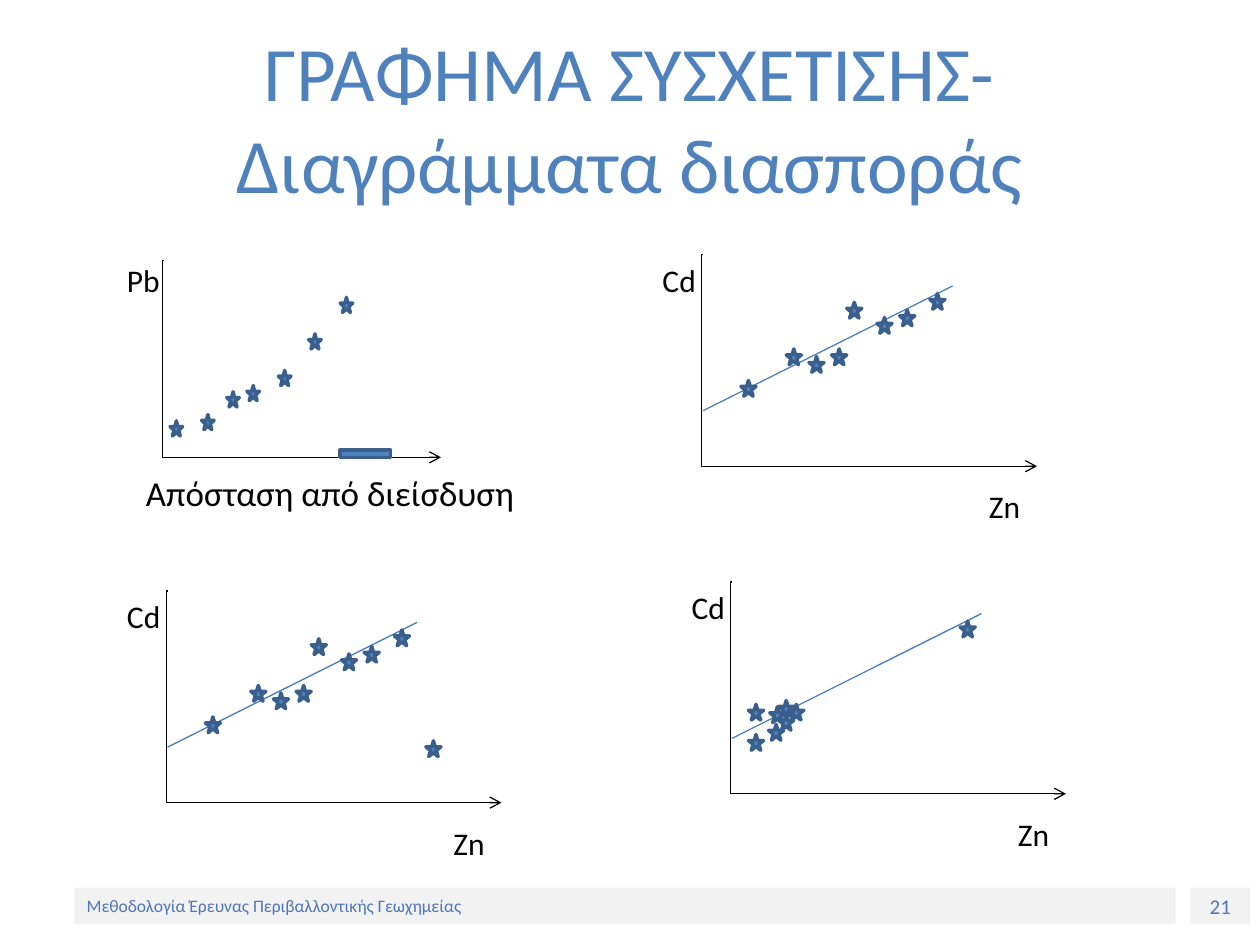
from dataclasses import dataclass

import lxml.etree
import pptx
import pptx.dml.color
import pptx.enum.shapes
import pptx.enum.text
import pptx.oxml.ns
import pptx.util

COLORS = {
    "title": "4F81BD",
    "marker": "4F81BD",
    "outline": "3A5F8C",
    "trend": "4B7EBC",
    "axis": "000000",
    "bar": "F2F2F2",
    "footer": "5075BC",
}
FONT = "Calibri"
COLUMNS, ROWS = 100, 75  # one grid cell is a tenth of an inch

SHAPE = pptx.enum.shapes.MSO_SHAPE
CONNECTOR = pptx.enum.shapes.MSO_CONNECTOR
ALIGN = pptx.enum.text.PP_ALIGN
ANCHOR = pptx.enum.text.MSO_ANCHOR
AUTO_SIZE = pptx.enum.text.MSO_AUTO_SIZE

Point = tuple[float, float]


@dataclass(frozen=True)
class Label:
    text: str
    at: Point
    size: Point
    points: int = 18


@dataclass(frozen=True)
class ScatterPlot:
    """Everything but the corner is measured from the top of the y axis."""
    corner: Point
    extent: Point
    labels: tuple[Label, ...]
    stars: tuple[Point, ...]
    star_size: Point = (1.2, 1.25)
    trend: tuple[Point, ...] = ()
    bar: tuple[Point, ...] = ()


presentation = pptx.Presentation()
presentation.slide_width = pptx.util.Inches(10)
presentation.slide_height = pptx.util.Inches(7.5)
slide = presentation.slides.add_slide(presentation.slide_layouts[5])


def grid(*lengths: float) -> list[int]:
    """Turn alternating columns and rows into slide lengths."""
    cells = (presentation.slide_width / COLUMNS, presentation.slide_height / ROWS)
    return [round(length * cells[i % 2]) for i, length in enumerate(lengths)]


def rgb(name: str) -> pptx.dml.color.RGBColor:
    return pptx.dml.color.RGBColor.from_string(COLORS[name])


def write(shape, text: str, points: int, color: str, align=ALIGN.LEFT) -> None:
    paragraph = shape.text_frame.paragraphs[0]
    paragraph.text = text
    paragraph.alignment = align
    font = paragraph.runs[0].font
    font.name, font.size = FONT, pptx.util.Pt(points)
    font.color.rgb = rgb(color)


def add_filled(kind, at: Point, size: Point, fill: str, outline: str = ""):
    shape = slide.shapes.add_shape(kind, *grid(*at, *size))
    shape.shadow.inherit = False
    shape.fill.solid()
    shape.fill.fore_color.rgb = rgb(fill)
    if outline:
        shape.line.color.rgb = rgb(outline)
        shape.line.width = pptx.util.Pt(2)
    else:
        shape.line.fill.background()
    return shape


def add_line(kind, start: Point, end: Point, color: str):
    line = slide.shapes.add_connector(kind, *grid(*start, *end))
    line.line.color.rgb = rgb(color)
    line.line.width = pptx.util.Pt(0.75)
    properties = line._element.spPr
    lxml.etree.SubElement(properties, pptx.oxml.ns.qn("a:effectLst"))
    return line


def add_axes(start: Point, end: Point) -> None:
    """One elbow line runs down the y axis and along the x axis."""
    qn = pptx.oxml.ns.qn
    properties = add_line(CONNECTOR.ELBOW, start, end, "axis")._element.spPr
    bend = properties.find(qn("a:prstGeom")).find(qn("a:avLst"))
    lxml.etree.SubElement(bend, qn("a:gd"), name="adj1", fmla="val -400")
    lxml.etree.SubElement(properties.find(qn("a:ln")), qn("a:tailEnd"), type="arrow")


def add_label(label: Label, at: Point) -> None:
    box = slide.shapes.add_textbox(*grid(*at, *label.size))
    box.text_frame.word_wrap = False
    box.text_frame.auto_size = AUTO_SIZE.SHAPE_TO_FIT_TEXT
    write(box, label.text, label.points, "axis")


def add_plot(plot: ScatterPlot) -> None:
    def place(offset: Point) -> Point:
        return plot.corner[0] + offset[0], plot.corner[1] + offset[1]

    add_axes(plot.corner, place(plot.extent))
    for label in plot.labels:
        add_label(label, place(label.at))
    if plot.trend:
        start, end = plot.trend
        add_line(CONNECTOR.STRAIGHT, place(start), place(end), "trend")
    if plot.bar:
        at, size = plot.bar
        add_filled(SHAPE.RECTANGLE, place(at), size, "marker", "outline")
    for star in plot.stars:
        add_filled(SHAPE.STAR_5_POINT, place(star), plot.star_size, "marker", "outline")


def cd_zn_plot(corner: Point, stars: tuple[Point, ...]) -> ScatterPlot:
    labels = (Label("Zn", (21.7, 18), (4.5, 4)), Label("Cd", (-4.2, 0), (4.7, 4)))
    return ScatterPlot(corner, (26.5, 16.8), labels, stars,
                       trend=((0, 12.4), (19.8, 2.5)))


def add_footer_bar(at: Point, size: Point, text: str, points: int, align) -> None:
    bar = add_filled(SHAPE.RECTANGLE, at, size, "bar")
    bar.text_frame.word_wrap = True
    bar.text_frame.vertical_anchor = ANCHOR.MIDDLE
    write(bar, text, points, "footer", align)


# Footer bars
add_footer_bar((94.5, 70.45), (4.7, 2.9), "21", 12, ALIGN.CENTER)
add_footer_bar((5.9, 70.45), (87.4, 2.9),
               "Μεθοδολογία Έρευνας Περιβαλλοντικής Γεωχημείας", 10, ALIGN.LEFT)

# Title
title = slide.shapes.title
title.left, title.top, title.width, title.height = grid(5, 3, 90, 12.5)
title.text_frame.word_wrap = True
title.text_frame.auto_size = AUTO_SIZE.NONE
title.text_frame.vertical_anchor = ANCHOR.MIDDLE
write(title, "ΓΡΑΦΗΜΑ ΣΥΣΧΕΤΙΣΗΣ-Διαγράμματα διασποράς", 44, "title", ALIGN.CENTER)

# Scatter plots
linear = ((18, 3.1), (8.4, 8.1), (13.8, 5), (6.6, 7.5),
          (3, 10), (15.6, 4.4), (10.2, 7.5), (11.4, 3.8))
outlier = (20.5, 11.9)
cluster = ((18.1, 3.1), (3.7, 10.5), (2.9, 11.3), (1.3, 9.7),
           (3, 9.9), (3.7, 9.4), (1.3, 12.1), (4.5, 9.7))
distance = ((0.5, 12.7), (3, 12.2), (5, 10.4), (6.6, 9.9),
            (9.1, 8.7), (11.5, 5.8), (14, 2.9))

distance_plot = ScatterPlot(
    (13, 20.7), (22, 15.6),
    (Label("Pb", (-3.9, -0.5), (4.6, 4)),
     Label("Απόσταση από διείσδυση", (-2.4, 16.2), (31.5, 4.4), 20)),
    distance, star_size=(1, 1.2), bar=((14, 15), (4, 0.6)))

for scatter_plot in (
    cd_zn_plot((55.8, 20.2), linear),
    distance_plot,
    cd_zn_plot((13.3, 46.9), linear + (outlier,)),
    cd_zn_plot((58.1, 46.2), cluster),
):
    add_plot(scatter_plot)

presentation.save("out.pptx")
